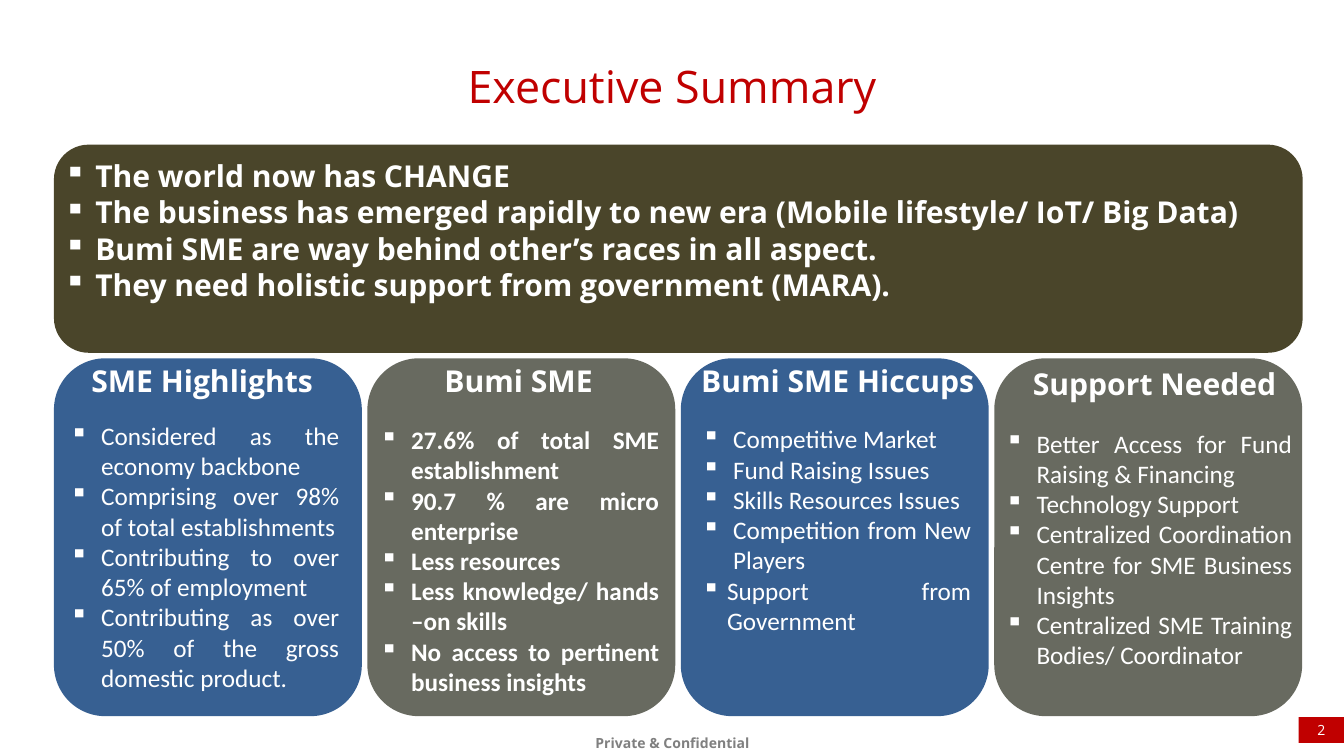
from lxml.etree import SubElement
from pptx import Presentation
from pptx.dml.color import RGBColor
from pptx.enum.shapes import MSO_SHAPE
from pptx.enum.text import MSO_ANCHOR, PP_ALIGN
from pptx.oxml.ns import qn
from pptx.util import Inches, Pt

RED, WHITE, GREY = "C00000", "FFFFFF", "808080"
OLIVE, BLUE, STONE = "4A452A", "376092", "686A60"
HEADING_FONT, BODY_FONT = "Open Sans", "Calibri"
CARD_LEFT, CARD_STEP, CARD_TOP, CARD_WIDTH, CARD_HEIGHT = 1.07, 6.22, 7.11, 6.11, 7.1
INDENT = 0.62

MESSAGES = [
    "The world now has CHANGE",
    "The business has emerged rapidly to new era (Mobile lifestyle/ IoT/ Big Data)",
    "Bumi SME are way behind other’s races in all aspect.",
    "They need holistic support from government (MARA).",
]

# heading, heading box, points, points box, bold points, indent of the last point
CARDS = [
    ("SME Highlights", (0.95, 7.09, 6.12, 0.93), [
        "Considered as the economy backbone",
        "Comprising over 98% of total establishments",
        "Contributing to over 65% of employment",
        "Contributing as over 50% of the gross domestic product.",
    ], (1.29, 8.29, 5.54, 5.55), False, INDENT),
    ("Bumi SME", (7.56, 7.09, 5.46, 0.93), [
        "27.6% of total SME establishment",
        "90.7 % are micro enterprise",
        "Less resources",
        "Less knowledge/ hands –on skills",
        "No access to pertinent business insights",
    ], (7.44, 8.37, 5.74, 5.55), True, INDENT),
    ("Bumi SME Hiccups", (13.56, 7.09, 6.12, 0.93), [
        "Competitive Market",
        "Fund Raising Issues",
        "Skills Resources Issues",
        "Competition from New Players",
        "Support from Government",
    ], (13.83, 8.36, 5.54, 4.34), False, 0.5),
    ("Support Needed", (20.18, 7.15, 5.46, 0.93), [
        "Better Access for Fund Raising & Financing",
        "Technology Support",
        "Centralized Coordination Centre for SME Business Insights",
        "Centralized SME Training Bodies/ Coordinator",
    ], (19.85, 8.44, 5.89, 4.95), False, INDENT),
]


def rgb(colour):
    return RGBColor.from_string(colour)


def set_margins(frame, side, end):
    frame.margin_left = frame.margin_right = Inches(side)
    frame.margin_top = frame.margin_bottom = Inches(end)


def format_paragraph(paragraph, size, colour, align, font=HEADING_FONT, bold=False):
    paragraph.alignment = align
    paragraph.font.size = Pt(size)
    paragraph.font.name = font
    paragraph.font.bold = bold
    paragraph.font.color.rgb = rgb(colour)


def add_bullet(paragraph, indent):
    properties = paragraph._p.get_or_add_pPr()
    properties.set("marL", str(Inches(indent)))
    properties.set("indent", str(-Inches(indent)))
    SubElement(properties, qn("a:buChar"), char="▪")


def add_panel(slide, kind, box, colour):
    panel = slide.shapes.add_shape(kind, *map(Inches, box))
    panel.shadow.inherit = False
    panel.fill.solid()
    panel.fill.fore_color.rgb = rgb(colour)
    panel.line.fill.background()
    return panel


def add_frame(slide, box, side=0.2, end=0.1):
    frame = slide.shapes.add_textbox(*map(Inches, box)).text_frame
    frame.word_wrap = True
    set_margins(frame, side, end)
    return frame


def add_label(slide, box, text, size, colour):
    paragraph = add_frame(slide, box).paragraphs[0]
    paragraph.text = text
    format_paragraph(paragraph, size, colour, PP_ALIGN.CENTER, bold=True)


def add_points(frame, points, size, align, font, bold, last_indent=INDENT):
    frame.text = "\n".join(points)
    for number, paragraph in enumerate(frame.paragraphs, 1):
        add_bullet(paragraph, last_indent if number == len(points) else INDENT)
        format_paragraph(paragraph, size, WHITE, align, font, bold)


def add_title(slide, text):
    title = slide.shapes.title
    title.left, title.top, title.width, title.height = map(Inches, (1.53, 1.04, 23.61, 1.35))
    frame = title.text_frame
    frame.text = text
    frame.vertical_anchor = MSO_ANCHOR.TOP
    set_margins(frame, 0.27, 0.13)
    format_paragraph(frame.paragraphs[0], 64, RED, PP_ALIGN.CENTER)


def add_page_number(slide, number):
    tab = add_panel(slide, MSO_SHAPE.RECTANGLE, (25.77, 14.23, 0.9, 0.51), RED)
    frame = tab.text_frame
    frame.text = number
    frame.vertical_anchor = MSO_ANCHOR.MIDDLE
    set_margins(frame, 0, 0)
    format_paragraph(frame.paragraphs[0], 20, WHITE, PP_ALIGN.CENTER)


def main():
    deck = Presentation()
    deck.slide_width, deck.slide_height = Inches(26.67), Inches(15)
    slide = deck.slides.add_slide(deck.slide_layouts[5])

    add_label(slide, (11.03, 14.47, 4.63, 0.53), "Private & Confidential", 20, GREY)
    add_page_number(slide, "2")
    add_title(slide, "Executive Summary")

    add_panel(slide, MSO_SHAPE.ROUNDED_RECTANGLE, (CARD_LEFT, 2.87, 24.78, 4.13), OLIVE)
    add_points(add_frame(slide, (CARD_LEFT, 3.03, 25.02, 3.82)), MESSAGES,
               43, PP_ALIGN.LEFT, HEADING_FONT, True)

    for column, (heading, heading_box, points, points_box, bold, last_indent) in enumerate(CARDS):
        card_box = (CARD_LEFT + column * CARD_STEP, CARD_TOP, CARD_WIDTH, CARD_HEIGHT)
        add_panel(slide, MSO_SHAPE.ROUNDED_RECTANGLE, card_box, STONE if column % 2 else BLUE)
        add_label(slide, heading_box, heading, 43, WHITE)
        add_points(add_frame(slide, points_box, 0.1, 0.05), points,
                   36, PP_ALIGN.JUSTIFY, BODY_FONT, bold, last_indent)

    deck.save("out.pptx")


if __name__ == "__main__":
    main()
